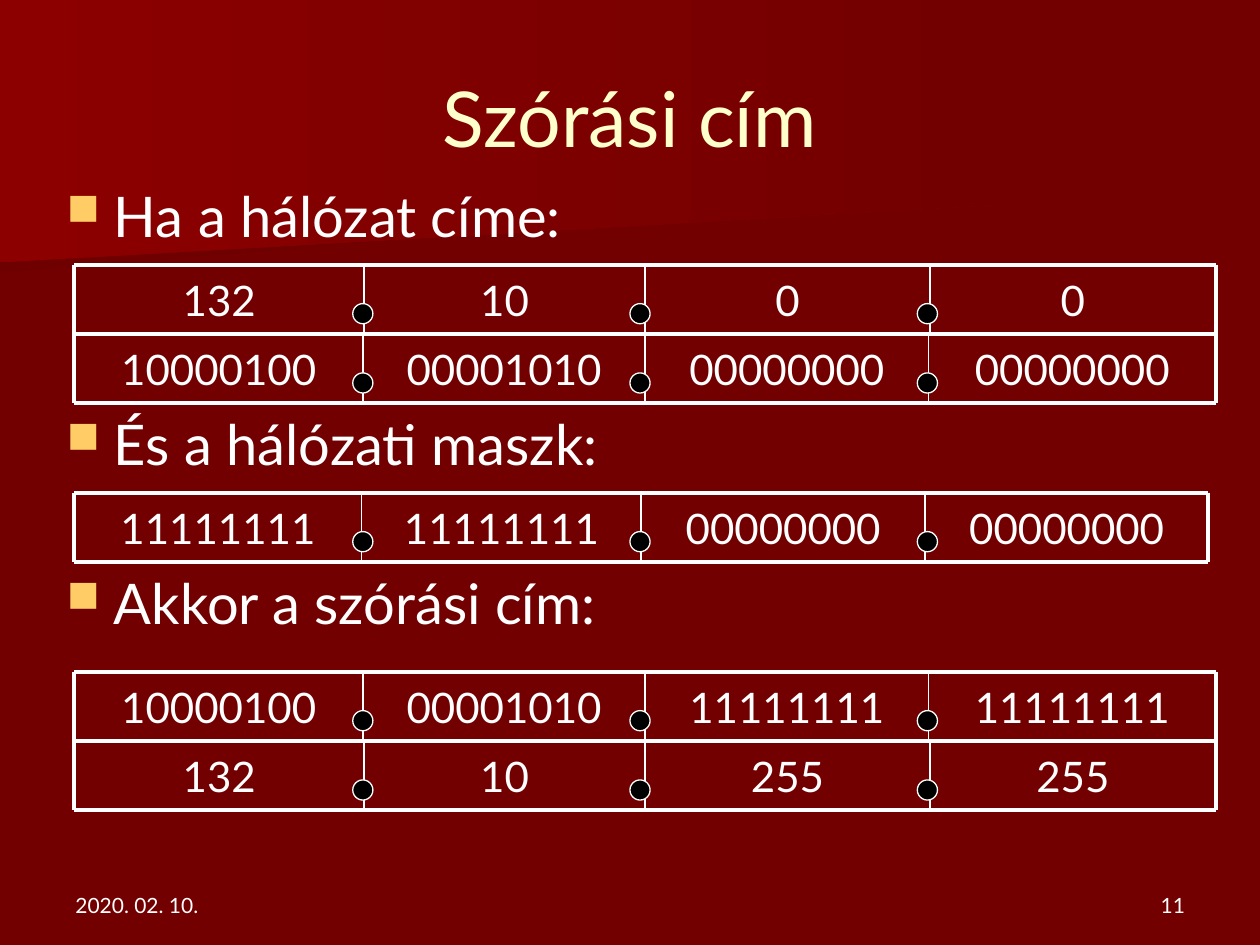
from dataclasses import dataclass

from lxml.etree import SubElement
from pptx import Presentation
from pptx.dml.color import RGBColor
from pptx.enum.shapes import MSO_CONNECTOR as Conn, MSO_SHAPE as Shape
from pptx.enum.text import MSO_ANCHOR as Anchor, PP_ALIGN as Align
from pptx.oxml.ns import qn
from pptx.util import Pt

FONT = "Lato"
WHITE, CREAM, GOLD, BLACK, MAROON = "FFFFFF", "FFFFCC", "FFCC66", "000000", "720000"
ROW_H = 39.6
DOT = 11.5
DOT_DROP = 22.3
DOT_LEFTS = (201.6, 360, 524.2)

# Column edges of the three kinds of row
BINARY = (42.5, 207.4, 368.6, 530.6, 694.8)
DECIMAL = (42.5, 208.1, 368.6, 531.4, 694.8)
MASK = (42.5, 206.6, 366.5, 528.5, 690.5)


@dataclass(frozen=True)
class Box:
    text: str
    left: float
    top: float
    width: float
    height: float
    size: float
    color: str = WHITE
    align: Align = Align.LEFT
    anchor: Anchor = Anchor.TOP
    spaced: bool = False
    bullet: bool = False


@dataclass(frozen=True)
class OctetRow:
    top: float
    edges: tuple[float, ...]
    octets: tuple[str, ...]
    first: bool = True  # the first row of a block also gets a top border


@dataclass(frozen=True)
class Band:
    points: tuple[tuple[float, float], ...]
    start_color: str


BANDS = (
    Band(((560.2, 110.2), (0, 156.2), (0, 72.7), (560.9, 72.7), (560.2, 92.2)), "6F0000"),
    Band(((570.2, 116.6), (0, 149.8), (0, 0), (570.2, 0)), "8C0000"),
)

BOXES = (
    Box("2020. 02. 10.", 36, 491.8, 168, 36, 12, anchor=Anchor.BOTTOM),
    Box("11", 516.2, 491.8, 168, 36, 12, align=Align.RIGHT, anchor=Anchor.BOTTOM),
    Box("Szórási cím", 36, 21.6, 648, 90, 44, CREAM, Align.CENTER, Anchor.MIDDLE),
    *(Box(text, 31, top, 648, 56.9, 32, spaced=True, bullet=True)
      for text, top in (("Ha a hálózat címe:", 100.1),
                        ("És a hálózati maszk:", 230.4),
                        ("Akkor a szórási cím:", 321.1))),
)

ROWS = (
    OctetRow(151.2, DECIMAL, ("132", "10", "0", "0")),
    OctetRow(190.8, BINARY, ("10000100", "00001010", "00000000", "00000000"), False),
    OctetRow(281.5, MASK, ("11111111", "11111111", "00000000", "00000000")),
    OctetRow(383.8, BINARY, ("10000100", "00001010", "11111111", "11111111")),
    OctetRow(423.4, DECIMAL, ("132", "10", "255", "255"), False),
)


def rgb(value: str) -> RGBColor:
    return RGBColor.from_string(value)


def add_band(s, band: Band) -> None:
    start, *rest = band.points
    builder = s.shapes.build_freeform(*start, scale=Pt(1))
    builder.add_line_segments(rest, close=True)
    sp = builder.convert_to_shape()
    sp.shadow.inherit = False
    sp.line.fill.background()
    sp.fill.gradient()
    sp.fill.gradient_angle = 0
    for stop, color in zip(sp.fill.gradient_stops, (band.start_color, MAROON)):
        stop.color.rgb = rgb(color)


def add_box(s, box: Box) -> None:
    sp = s.shapes.add_textbox(Pt(box.left), Pt(box.top), Pt(box.width), Pt(box.height))
    tf = sp.text_frame
    tf.word_wrap = True
    tf.vertical_anchor = box.anchor
    p = tf.paragraphs[0]
    p.alignment = box.align
    r = p.add_run()
    r.text = box.text
    r.font.name = FONT
    r.font.size = Pt(box.size)
    r.font.color.rgb = rgb(box.color)
    pPr = p._p.get_or_add_pPr()
    if box.spaced:
        SubElement(SubElement(pPr, qn("a:spcBef")), qn("a:spcPct"), val="20000")
    if box.bullet:
        pPr.set("marL", str(Pt(27)))
        pPr.set("indent", str(Pt(-27)))
        SubElement(SubElement(pPr, qn("a:buClr")), qn("a:srgbClr"), val=GOLD)
        SubElement(pPr, qn("a:buSzPct"), val="80000")
        SubElement(pPr, qn("a:buChar"), char="■")


def add_line(s, x1: float, y1: float, x2: float, y2: float, width: float) -> None:
    line = s.shapes.add_connector(Conn.STRAIGHT, Pt(x1), Pt(y1), Pt(x2), Pt(y2))
    line.line.color.rgb = rgb(WHITE)
    line.line.width = Pt(width)
    SubElement(line._element.spPr, qn("a:effectLst"))


def add_dot(s, left: float, top: float) -> None:
    sp = s.shapes.add_shape(Shape.OVAL, Pt(left), Pt(top), Pt(DOT), Pt(DOT))
    sp.shadow.inherit = False
    sp.fill.solid()
    sp.fill.fore_color.rgb = rgb(BLACK)
    sp.line.color.rgb = rgb(WHITE)
    sp.line.width = Pt(0.75)


def add_octet_row(s, row: OctetRow) -> None:
    edges, bottom = row.edges, row.top + ROW_H
    for text, left, right in zip(row.octets, edges, edges[1:]):
        add_box(s, Box(text, left, row.top, right - left, ROW_H, 24,
                       align=Align.CENTER, anchor=Anchor.MIDDLE, spaced=True))
    for y in (row.top, bottom) if row.first else (bottom,):
        add_line(s, edges[0], y, edges[-1], y, 2.25)
    for x in edges:
        add_line(s, x, row.top, x, bottom, 2.25 if x in (edges[0], edges[-1]) else 1)
    for left in DOT_LEFTS:
        add_dot(s, left, row.top + DOT_DROP)


def main() -> None:
    prs = Presentation()
    prs.slide_width, prs.slide_height = Pt(720), Pt(540)
    s = prs.slides.add_slide(prs.slide_layouts[6])

    # Background
    s.background.fill.solid()
    s.background.fill.fore_color.rgb = rgb(MAROON)
    for band in BANDS:
        add_band(s, band)

    # Footer, title and bullets
    for box in BOXES:
        add_box(s, box)

    # Address rows
    for row in ROWS:
        add_octet_row(s, row)

    prs.save("out.pptx")


if __name__ == "__main__":
    main()
